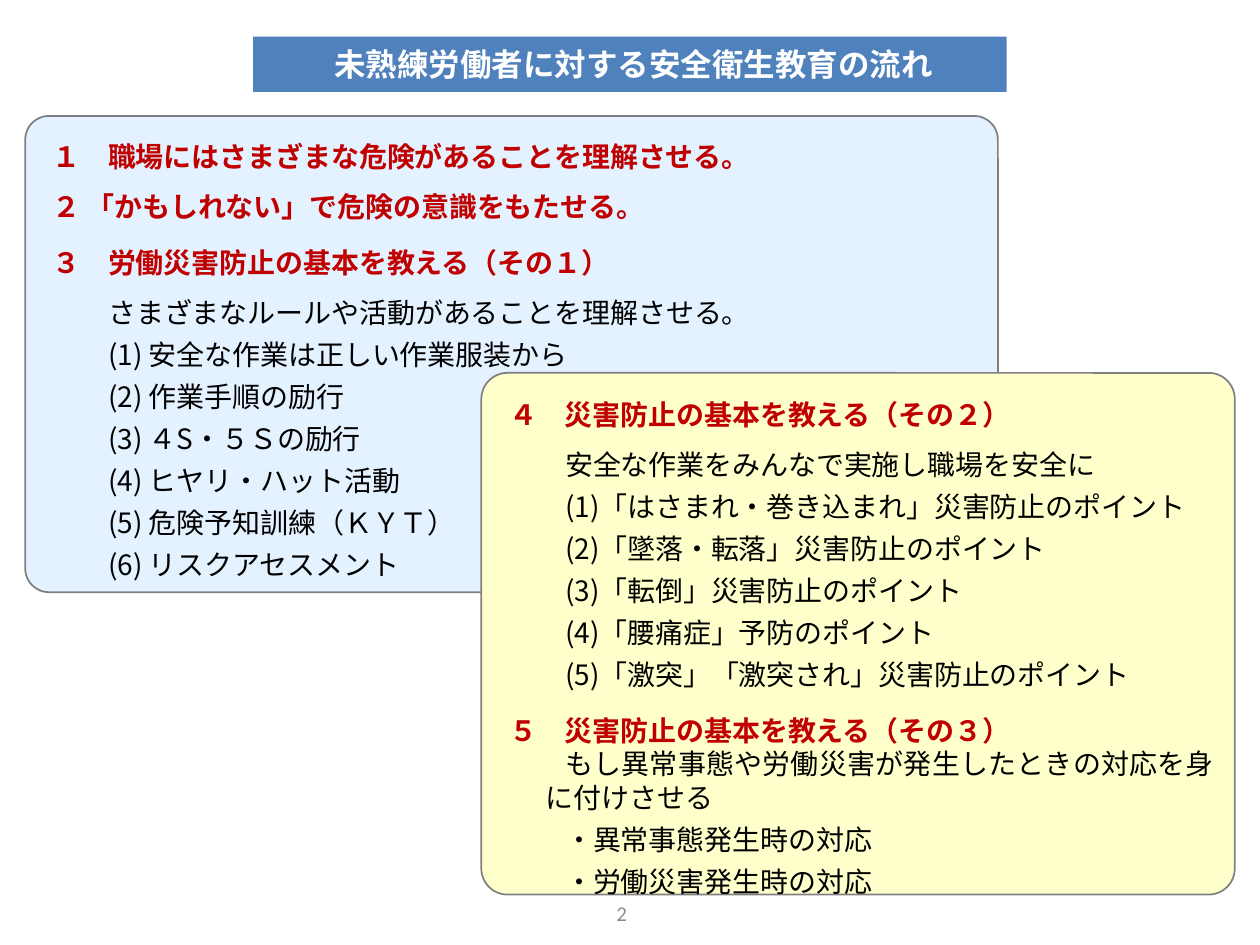
"""Build the slide on the flow of safety training for inexperienced workers."""
import pptx
import pptx.dml.color
import pptx.enum.shapes
import pptx.enum.text
import pptx.oxml
import pptx.oxml.ns
import pptx.util

Pt = pptx.util.Pt
RGB = pptx.dml.color.RGBColor
ALIGN = pptx.enum.text.PP_ALIGN
ANCHOR = pptx.enum.text.MSO_ANCHOR

RED = RGB(0xC0, 0x00, 0x00)
BLACK = RGB(0x00, 0x00, 0x00)
WHITE = RGB(0xFF, 0xFF, 0xFF)
BLUE = RGB(0x4F, 0x81, 0xBD)
PALE_BLUE = RGB(0x99, 0xCC, 0xFF)
PALE_YELLOW = RGB(0xFF, 0xFF, 0xCC)
GRAY = RGB(0x80, 0x80, 0x80)
NUMBER_GRAY = RGB(0x8C, 0x8C, 0x8C)
JAPANESE = "Noto Sans CJK JP"

TITLE = " 未熟練労働者に対する安全衛生教育の流れ"
PAGE_NUMBER = "2"
PANELS = [
    {
        "place": (14.4, 66.24, 555.84, 272.16), "fill": PALE_BLUE, "opacity": 26,
        "lines": [
            ("heading", "１　職場にはさまざまな危険があることを理解させる。"),
            ("heading", "２ 「かもしれない」で危険の意識をもたせる。"),
            ("later heading", "３　労働災害防止の基本を教える（その１）"),
            ("lead", "さまざまなルールや活動があることを理解させる。"),
            ("item", "(1) 安全な作業は正しい作業服装から"),
            ("item", "(2) 作業手順の励行"),
            ("item", "(3) ４S・５Ｓの励行"),
            ("item", "(4) ヒヤリ・ハット活動"),
            ("item", "(5) 危険予知訓練（ＫＹＴ）"),
            ("item", "(6) リスクアセスメント"),
        ],
    },
    {
        "place": (275.04, 213.12, 430.56, 298.08), "fill": PALE_YELLOW, "opacity": 100,
        "lines": [
            ("later heading", "４　災害防止の基本を教える（その２）"),
            ("lead", "安全な作業をみんなで実施し職場を安全に"),
            ("item", "(1)「はさまれ・巻き込まれ」災害防止のポイント"),
            ("item", "(2)「墜落・転落」災害防止のポイント"),
            ("item", "(3)「転倒」災害防止のポイント"),
            ("item", "(4)「腰痛症」予防のポイント"),
            ("item", "(5)「激突」「激突され」災害防止のポイント"),
            ("later heading", "５　災害防止の基本を教える（その３）"),
            ("wrapped", "もし異常事態や労働災害が発生したときの対応を身に付けさせる"),
            ("item", "・異常事態発生時の対応"),
            ("item", "・労働災害発生時の対応"),
        ],
    },
]
LINE_STYLES = {
    "heading": {"spacing": 1.5, "before": 0, "left": 0, "first": 0, "color": RED, "bold": True},
    "later heading": {"spacing": 1.5, "before": 3, "left": 0, "first": 0, "color": RED, "bold": True},
    "lead": {"spacing": 1.5, "before": 0, "left": 32, "first": 0, "color": BLACK, "bold": False},
    "item": {"spacing": 1.25, "before": 0, "left": 32, "first": 0, "color": BLACK, "bold": False},
    "wrapped": {"spacing": 1, "before": 0, "left": 21, "first": 11, "color": BLACK, "bold": False},
}


def set_attributes(target, values):
    for name, value in values.items():
        setattr(target, name, value)


def place_shape(shape, place):
    set_attributes(shape, dict(zip(("left", "top", "width", "height"), map(Pt, place))))


def write_line(paragraph, text, size, color, bold=False, font=JAPANESE, align=ALIGN.CENTER):
    paragraph.alignment = align
    run = paragraph.add_run()
    run.text = text
    set_attributes(run.font, {"name": font, "size": Pt(size), "bold": bold})
    run.font.color.rgb = color
    east_asian = pptx.oxml.parse_xml(
        f'<a:ea {pptx.oxml.ns.nsdecls("a")} typeface="{font}"/>')
    run.font._element.find(pptx.oxml.ns.qn("a:latin")).addnext(east_asian)


def add_title(slide):
    title = slide.shapes.title
    place_shape(title, (144.72, 20.88, 430.56, 31.68))
    rounded = pptx.oxml.parse_xml(
        f'<a:prstGeom {pptx.oxml.ns.nsdecls("a")} prst="roundRect"><a:avLst/></a:prstGeom>')
    title._element.spPr.find(pptx.oxml.ns.qn("a:xfrm")).addnext(rounded)
    title.fill.solid()
    title.fill.fore_color.rgb = BLUE
    set_attributes(title.text_frame, {
        "word_wrap": True, "vertical_anchor": ANCHOR.MIDDLE,
        "auto_size": pptx.enum.text.MSO_AUTO_SIZE.NONE})
    write_line(title.text_frame.paragraphs[0], TITLE, 18, WHITE, bold=True)


def add_panel(slide, content):
    panel = slide.shapes.add_shape(
        pptx.enum.shapes.MSO_SHAPE.ROUNDED_RECTANGLE, *map(Pt, content["place"]))
    panel.adjustments[0] = 0.05
    panel.shadow.inherit = False
    panel.fill.solid()
    panel.fill.fore_color.rgb = content["fill"]
    if content["opacity"] < 100:
        color = panel._element.spPr.find(".//" + pptx.oxml.ns.qn("a:srgbClr"))
        color.append(pptx.oxml.parse_xml(
            f'<a:alpha {pptx.oxml.ns.nsdecls("a")} val="{content["opacity"] * 1000}"/>'))
    panel.line.color.rgb = GRAY
    panel.line.width = Pt(1)
    frame = panel.text_frame
    set_attributes(frame, {
        "word_wrap": True, "vertical_anchor": ANCHOR.TOP, "margin_left": Pt(11.5),
        "margin_top": Pt(0), "margin_right": Pt(7.2), "margin_bottom": Pt(3.6)})
    for index, (kind, text) in enumerate(content["lines"]):
        style = LINE_STYLES[kind]
        paragraph = frame.add_paragraph() if index else frame.paragraphs[0]
        set_attributes(paragraph, {
            "line_spacing": style["spacing"], "space_before": Pt(style["before"])})
        properties = paragraph._p.get_or_add_pPr()
        properties.set("marL", str(Pt(style["left"])))
        properties.set("indent", str(Pt(style["first"])))
        write_line(paragraph, text, 16, style["color"], style["bold"], align=ALIGN.JUSTIFY)


def add_page_number(slide):
    number = slide.shapes.add_textbox(*map(Pt, (271.44, 507.6, 167.76, 28.8)))
    set_attributes(number.text_frame, {"word_wrap": True, "vertical_anchor": ANCHOR.MIDDLE})
    write_line(number.text_frame.paragraphs[0], PAGE_NUMBER, 12, NUMBER_GRAY, font="Calibri")


def main():
    deck = pptx.Presentation()
    set_attributes(deck, {"slide_width": Pt(720), "slide_height": Pt(540)})
    slide = deck.slides.add_slide(deck.slide_layouts.get_by_name("Title Only"))
    add_title(slide)
    for content in PANELS:
        add_panel(slide, content)
    add_page_number(slide)
    deck.save("out.pptx")


if __name__ == "__main__":
    main()
